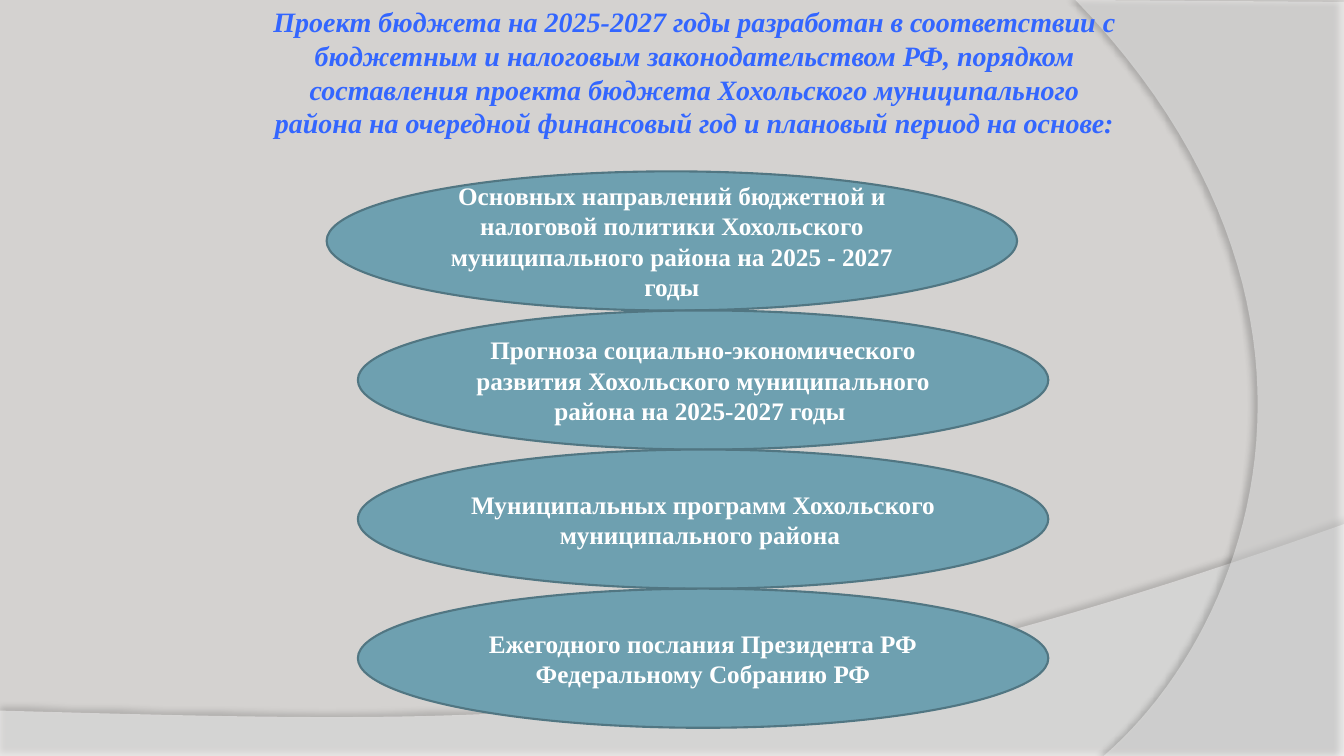
from lxml import etree
from pptx import Presentation
from pptx.dml.color import RGBColor
from pptx.enum.shapes import MSO_SHAPE
from pptx.enum.text import MSO_ANCHOR, PP_ALIGN
from pptx.oxml.ns import qn
from pptx.util import Pt

ELLIPSE = MSO_SHAPE.OVAL
CENTER = PP_ALIGN.CENTER
TOP, MIDDLE = MSO_ANCHOR.TOP, MSO_ANCHOR.MIDDLE

WIDTH, HEIGHT = 960, 540
TITLE_FORMAT = {"name": "Times New Roman", "size": Pt(20), "bold": True, "italic": True}
BASIS_FORMAT = {"name": "Times New Roman", "size": Pt(18), "bold": True}

TITLE = (
    "Проект бюджета на 2025-2027 годы разработан в соответствии с бюджетным "
    "и налоговым законодательством РФ, порядком составления проекта бюджета "
    "Хохольского муниципального района на очередной финансовый год "
    "и плановый период на основе:"
)
# Left edge and text of each ellipse
BASES = [
    (233.3, "Основных направлений бюджетной и налоговой политики Хохольского "
            "муниципального района на 2025 - 2027 годы"),
    (255.6, "Прогноза социально-экономического развития Хохольского "
            "муниципального района на 2025-2027 годы "),
    (255.6, "Муниципальных программ Хохольского муниципального района "),
    (255.6, "Ежегодного послания Президента РФ Федеральному Собранию РФ"),
]
BASIS_TOP, BASIS_WIDTH, BASIS_HEIGHT = 122.4, 493.2, 99.36


def color(value):
    return RGBColor.from_string(value)


def bezier(start, control_1, control_2, end, steps=48):
    """Points along a cubic curve, both ends included."""
    points = []
    for step in range(steps + 1):
        t = step / steps
        weights = ((1 - t) ** 3, 3 * t * (1 - t) ** 2, 3 * t ** 2 * (1 - t), t ** 3)
        corners = (start, control_1, control_2, end)
        points.append(tuple(
            sum(weight * corner[axis] for weight, corner in zip(weights, corners))
            for axis in (0, 1)
        ))
    return points


class SlideBuilder:
    def __init__(self, slide, background):
        self.slide = slide
        fill = slide.background.fill
        fill.solid()
        fill.fore_color.rgb = color(background)

    def fill_text(self, shape, text, font_format, font_color, anchor):
        frame = shape.text_frame
        frame.word_wrap = True
        frame.vertical_anchor = anchor
        paragraph = frame.paragraphs[0]
        paragraph.alignment = CENTER
        run = paragraph.add_run()
        run.text = text
        for name, value in font_format.items():
            setattr(run.font, name, value)
        run.font.color.rgb = color(font_color)

    def text(self, box, text, font_format, font_color):
        shape = self.slide.shapes.add_textbox(*map(Pt, box))
        self.fill_text(shape, text, font_format, font_color, TOP)

    def ellipse(self, box, text, font_format):
        shape = self.slide.shapes.add_shape(ELLIPSE, *map(Pt, box))
        shape.shadow.inherit = False
        shape.fill.solid()
        shape.fill.fore_color.rgb = color("6EA0B0")
        shape.line.color.rgb = color("517682")
        shape.line.width = Pt(1.5)
        self.fill_text(shape, text, font_format, "FFFFFF", MIDDLE)

    def wave(self, points, opacity, shadow_opacity, distance, direction):
        """Translucent white area with a soft shadow."""
        points = [(Pt(x), Pt(y)) for x, y in points]
        builder = self.slide.shapes.build_freeform(*points[0], scale=1.0)
        builder.add_line_segments(points[1:], close=True)
        shape = builder.convert_to_shape()
        shape.line.fill.background()
        shape.fill.solid()
        shape.fill.fore_color.rgb = color("FFFFFF")
        shape.shadow.inherit = False
        properties = shape.element.spPr
        fill_color = properties.find(qn("a:solidFill")).find(qn("a:srgbClr"))
        etree.SubElement(fill_color, qn("a:alpha"), val=str(opacity * 1000))
        shadow = etree.SubElement(
            properties.find(qn("a:effectLst")), qn("a:outerShdw"),
            blurRad=str(Pt(4)), dist=str(Pt(distance)), dir=str(direction * 60000),
            algn="ctr", rotWithShape="0",
        )
        shadow_color = etree.SubElement(shadow, qn("a:srgbClr"), val="000000")
        etree.SubElement(shadow_color, qn("a:alpha"), val=str(shadow_opacity * 1000))


def main():
    presentation = Presentation()
    presentation.slide_width, presentation.slide_height = Pt(WIDTH), Pt(HEIGHT)
    slide = presentation.slides.add_slide(presentation.slide_layouts[6])
    builder = SlideBuilder(slide, "D4D2D0")

    # Background waves
    bottom_curve = bezier((WIDTH, 374.4), (536.4, 524.9), (375.1, 517.7), (0, 507.6))
    builder.wave([(0, HEIGHT), (WIDTH, HEIGHT)] + bottom_curve, 45, 35, 3.5, 270)
    right_curve = bezier((788.4, HEIGHT), (897.1, 445.7), (977, 216), (768.2, 0))
    builder.wave([(WIDTH, 1.4), (WIDTH, HEIGHT)] + right_curve, 40, 45, 4, 180)

    # Title
    builder.text((187.2, 0, 617.8, 104.4), TITLE, TITLE_FORMAT, "3366FF")

    # Stack of touching ellipses
    for row, (left, text) in enumerate(BASES):
        top = BASIS_TOP + row * BASIS_HEIGHT
        builder.ellipse((left, top, BASIS_WIDTH, BASIS_HEIGHT), text, BASIS_FORMAT)

    presentation.save("out.pptx")


if __name__ == "__main__":
    main()
